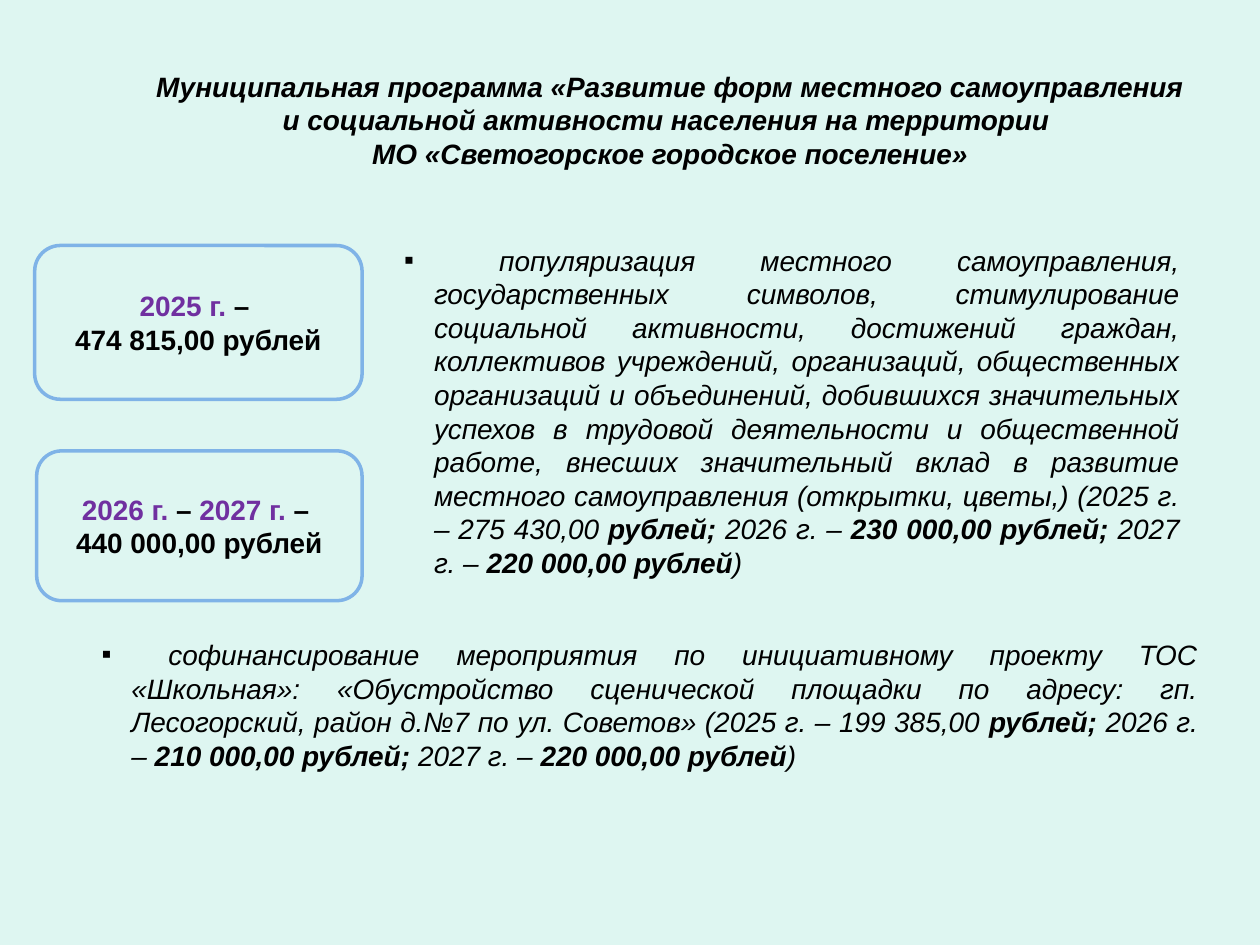
from lxml.etree import SubElement as Sub
from pptx import Presentation
from pptx.dml.color import RGBColor as RGB
from pptx.enum.shapes import MSO_SHAPE as Shape
from pptx.enum.text import MSO_ANCHOR as Anchor, PP_ALIGN as Align
from pptx.oxml.ns import qn
from pptx.util import Cm, Pt

MINT = RGB(0xDE, 0xF6, 0xF1)
BLUE = RGB(0x7F, 0xB3, 0xE7)
PLUM = RGB(0x70, 0x30, 0xA0)
BLACK = RGB(0, 0, 0)


def set_font(par, bold=None, slant=None):
    font = par.font
    font.name, font.size = "Arial", Pt(16)
    font.color.rgb = BLACK
    font.bold, font.italic = bold, slant


def add_run(par, text, bold=None, color=None):
    for i, line in enumerate(text.split("\n")):
        if i:
            par.add_line_break()
        run = par.add_run()
        run.text = line
        if bold:
            run.font.bold = True
        if color:
            run.font.color.rgb = color


def add_box(slide, left, top, width, height):
    box = slide.shapes.add_textbox(Cm(left), Cm(top), Cm(width), Cm(height))
    box.text_frame.word_wrap = True
    return box.text_frame


def add_title(slide, text):
    frame = add_box(slide, 2.69, 0.91, 21.64, 3)
    frame.vertical_anchor = Anchor.MIDDLE
    par = frame.paragraphs[0]
    par.alignment = Align.CENTER
    set_font(par, bold=True, slant=True)
    add_run(par, text)


def add_card(slide, place, parts):
    card = slide.shapes.add_shape(Shape.ROUNDED_RECTANGLE, *map(Cm, place))
    card.shadow.inherit = False
    card.fill.solid()
    card.fill.fore_color.rgb = MINT
    card.line.color.rgb = BLUE
    card.line.width = Pt(2)
    frame = card.text_frame
    frame.word_wrap = True
    frame.vertical_anchor = Anchor.MIDDLE
    par = frame.paragraphs[0]
    par.alignment = Align.CENTER
    set_font(par, bold=True)
    for text, color in parts:
        add_run(par, text, color=color)


def add_item(slide, place, parts):
    par = add_box(slide, *place).paragraphs[0]
    par.alignment = Align.JUSTIFY
    props = par._p.get_or_add_pPr()
    props.set("marL", str(Cm(0.6)))
    props.set("indent", str(Cm(-0.6)))
    Sub(props, qn("a:buFont"), typeface="Arial")
    Sub(props, qn("a:buChar"), char="▪")
    set_font(par, slant=True)
    for i, text in enumerate(parts):
        add_run(par, text, bold=i % 2 == 1)


def main():
    deck = Presentation()
    deck.slide_width, deck.slide_height = Cm(25.4), Cm(19.05)
    slide = deck.slides.add_slide(deck.slide_layouts[6])
    slide.background.fill.solid()
    slide.background.fill.fore_color.rgb = MINT

    add_title(slide, "Муниципальная программа «Развитие форм местного "
              "самоуправления и социальной активности населения на "
              "территории \nМО «Светогорское городское поселение»")
    add_item(slide, (7.9, 4.78, 16.13, 7.09), [
        " популяризация местного самоуправления, государственных символов, "
        "стимулирование социальной активности, достижений граждан, "
        "коллективов учреждений, организаций, общественных организаций и "
        "объединений, добившихся значительных успехов в трудовой "
        "деятельности и общественной работе, внесших значительный вклад в "
        "развитие местного самоуправления (открытки, цветы,) "
        "(2025 г. – 275 430,00",
        " рублей;", " 2026 г. – ", "230 000,00 рублей; ",
        "2027 г. – ", "220 000,00 рублей", ")"])
    add_card(slide, (0.7, 4.95, 6.6, 3.1), [
        ("2025 г. ", PLUM), ("– \n474 815,00 рублей", BLACK)])
    add_card(slide, (0.74, 9.09, 6.56, 3.02), [
        ("2026 г. ", PLUM), ("– ", BLACK),
        ("2027 г. ", PLUM), ("– \n440 000,00 рублей", BLACK)])
    add_item(slide, (1.8, 12.73, 22.6, 3), [
        " софинансирование мероприятия по инициативному проекту ТОС "
        "«Школьная»: «Обустройство сценической площадки по адресу: "
        "гп. Лесогорский, район д.№7 по ул. Советов» "
        "(2025 г. – 199 385,00 ",
        "рублей;", " 2026 г. – ", "210 000,00 рублей; ",
        "2027 г. – ", "220 000,00 рублей", ")"])
    deck.save("out.pptx")


if __name__ == "__main__":
    main()
